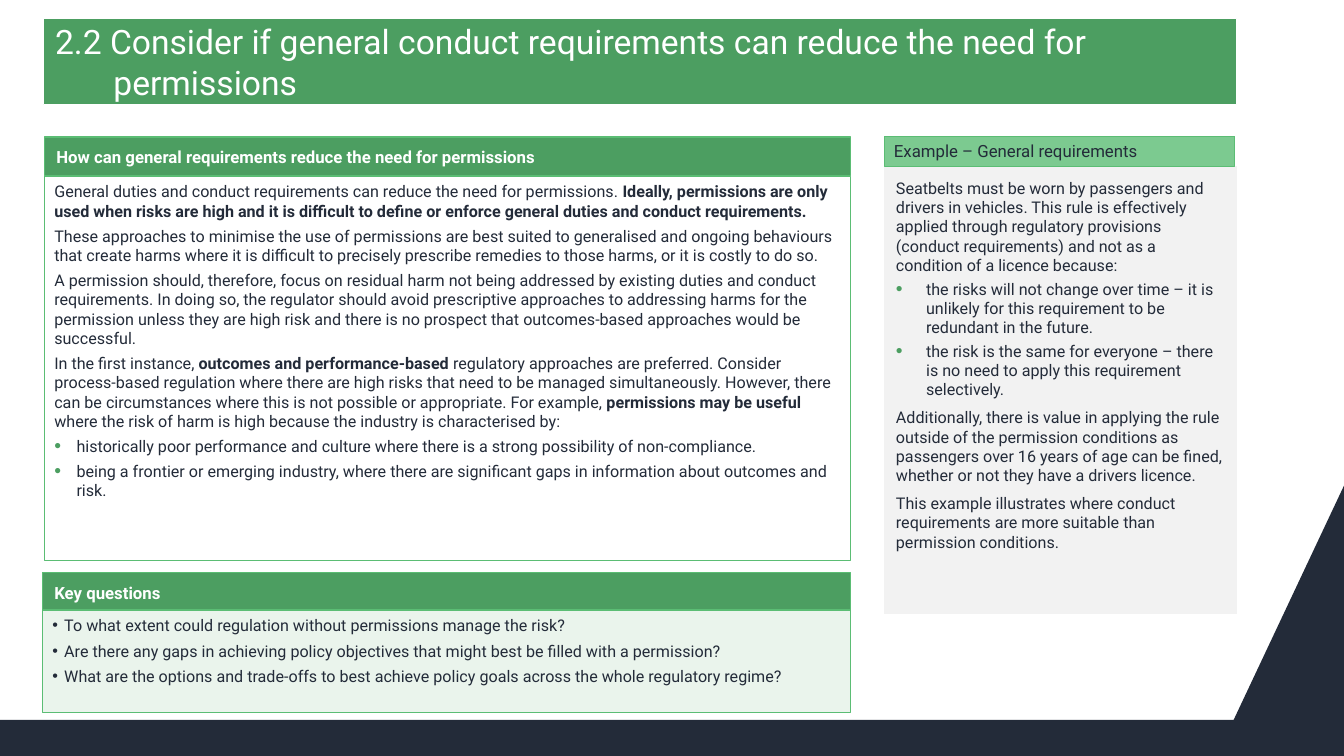
from lxml import etree
from pptx import Presentation, util as u
from pptx.dml import color
from pptx.enum import shapes, text
from pptx.oxml import ns

theme = {
    "font": "Roboto",
    "navy": "232B39", "green": "4C9E61", "light_green": "7CCA90", "border": "5BBD74",
    "pale_green": "EAF4EC", "grey": "F2F2F2", "white": "FFFFFF",
    "title": 24, "heading": 12, "body": 11.5,
}


def rgb(name):
    return color.RGBColor.from_string(theme[name])


def add_panel(box, paragraphs, fill, border=None, border_width=1, size="body", ink="navy",
              bold=False, middle=False, insets=(0.25, 0.13)):
    """Rectangle with text; **marks** enclose bold words, each paragraph has a style."""
    panel = slide.shapes.add_shape(shapes.MSO_SHAPE.RECTANGLE, *map(u.Cm, box))
    panel.shadow.inherit = False
    panel.fill.solid()
    panel.fill.fore_color.rgb = rgb(fill)
    if border:
        panel.line.color.rgb = rgb(border)
        panel.line.width = u.Pt(border_width)
    else:
        panel.line.fill.background()
    side, *vertical = insets
    frame_format = {
        "word_wrap": True,
        "vertical_anchor": text.MSO_ANCHOR.MIDDLE if middle else text.MSO_ANCHOR.TOP,
        "margin_left": u.Cm(side), "margin_right": u.Cm(side),
        "margin_top": u.Cm(vertical[0]), "margin_bottom": u.Cm(vertical[-1]),
    }
    for name, value in frame_format.items():
        setattr(panel.text_frame, name, value)

    for index, (words, style) in enumerate(paragraphs):
        frame = panel.text_frame
        paragraph = frame.add_paragraph() if index else frame.paragraphs[0]
        paragraph_format = {
            "alignment": text.PP_ALIGN.LEFT,
            "space_before": u.Pt(style.get("before", 0)),
            "space_after": u.Pt(style.get("after", 0)),
            "line_spacing": style.get("spacing", 1.0),
        }
        for name, value in paragraph_format.items():
            setattr(paragraph, name, value)
        for part, piece in enumerate(words.split("**")):
            if not piece:
                continue
            run = paragraph.add_run()
            run.text = piece
            run.font.color.rgb = rgb(ink)
            run_format = {"name": theme["font"], "size": u.Pt(theme[size]),
                          "bold": bold or part % 2 == 1}
            for name, value in run_format.items():
                setattr(run.font, name, value)

        # Hanging indent and bullet
        properties = paragraph._p.get_or_add_pPr()
        if "hang" in style:
            properties.set("marL", str(u.Cm(style["hang"])))
            properties.set("indent", str(-u.Cm(style["hang"])))
        if "bullet" in style:
            if style["bullet"] == "green":
                tint = etree.SubElement(properties, ns.qn("a:buClr"))
                etree.SubElement(tint, ns.qn("a:srgbClr"), val=theme["green"])
                etree.SubElement(properties, ns.qn("a:buSzPct"), val="120000")
            etree.SubElement(properties, ns.qn("a:buFont"), typeface="Arial")
            etree.SubElement(properties, ns.qn("a:buChar"), char="•")


deck = Presentation()
deck.slide_width, deck.slide_height = u.Cm(33.87), u.Cm(19.05)
slide = deck.slides.add_slide(deck.slide_layouts[6])

# Footer band rising to the right
footer_points = [(0, 18.14), (0, 19.05), (33.87, 19.05), (33.87, 12.24)]
outline = slide.shapes.build_freeform(u.Cm(31.09), u.Cm(18.14))
outline.add_line_segments([(u.Cm(x), u.Cm(y)) for x, y in footer_points], close=True)
footer = outline.convert_to_shape()
footer.shadow.inherit = False
footer.fill.solid()
footer.fill.fore_color.rgb = rgb("navy")
footer.line.fill.background()

# Paragraph styles
plain = {}
example_text = {"before": 6}
example_bullet = {"before": 3, "hang": 0.76, "bullet": "green"}
main_text = {"before": 2, "after": 2}
main_bullet = {**main_text, "hang": 0.56, "bullet": "green"}
question = {**main_text, "hang": 0.3, "bullet": "plain"}
heading_line = {"spacing": 0.9}

# Example text
add_panel((22.28, 4.19, 8.89, 11.28), [
    ("Seatbelts must be worn by passengers and drivers in vehicles. This rule is effectively "
     "applied through regulatory provisions (conduct requirements) and not as a condition of "
     "a licence because:", example_text),
    ("the risks will not change over time – it is unlikely for this requirement to be "
     "redundant in the future.", example_bullet),
    ("the risk is the same for everyone – there is no need to apply this requirement "
     "selectively.", example_bullet),
    ("Additionally, there is value in applying the rule outside of the permission conditions "
     "as passengers over 16 years of age can be fined, whether or not they have a drivers "
     "licence.", example_text),
    ("This example illustrates where conduct requirements are more suitable than permission "
     "conditions.", example_text),
], "grey", insets=(0.3, 0.3))

# Green section headings
for box, heading in [
    ((1.12, 3.45, 20.32, 0.97), "How can general requirements reduce the need for permissions"),
    ((1.07, 14.43, 20.37, 0.97), "Key questions"),
]:
    add_panel(box, [(heading, heading_line)], "green", "border", size="heading",
              ink="white", bold=True, middle=True, insets=(0.3, 0.2, 0.1))

# General requirements
add_panel((1.12, 4.45, 20.32, 9.68), [
    ("General duties and conduct requirements can reduce the need for permissions. **Ideally, "
     "permissions are only used when risks are high and it is difficult to define or enforce "
     "general duties and conduct requirements.**", main_text),
    ("These approaches to minimise the use of permissions are best suited to generalised and "
     "ongoing behaviours that create harms where it is difficult to precisely prescribe "
     "remedies to those harms, or it is costly to do so.", main_text),
    ("A permission should, therefore, focus on residual harm not being addressed by existing "
     "duties and conduct requirements. In doing so, the regulator should avoid prescriptive "
     "approaches to addressing harms for the permission unless they are high risk and there "
     "is no prospect that outcomes-based approaches would be successful.", main_text),
    ("In the first instance, **outcomes and performance-based **regulatory approaches are "
     "preferred. Consider process-based regulation where there are high risks that need to "
     "be managed simultaneously. However, there can be circumstances where this is not "
     "possible or appropriate. For example, **permissions may be useful **where the risk of "
     "harm is high because the industry is characterised by:", main_text),
    ("historically poor performance and culture where there is a strong possibility of "
     "non-compliance.", main_bullet),
    ("being a frontier or emerging industry, where there are significant gaps in information "
     "about outcomes and risk.", main_bullet),
], "white", "border")

# Key questions
add_panel((1.07, 15.37, 20.37, 2.59), [
    ("To what extent could regulation without permissions manage the risk?", question),
    ("Are there any gaps in achieving policy objectives that might best be filled with a "
     "permission?", {**question, "spacing": 1.07}),
    ("What are the options and trade-offs to best achieve policy goals across the whole "
     "regulatory regime?", question),
], "pale_green", "border")

# Slide title
add_panel((1.09, 0.46, 30.07, 2.18), [
    ("2.2 Consider if general conduct requirements can reduce the need for permissions",
     {"hang": 1.47}),
], "green", "white", size="title", ink="white", middle=True, insets=(0.3, 0.03))

# Example heading
add_panel((22.28, 3.43, 8.84, 0.76), [("Example – General requirements", plain)],
          "light_green", "border", 0.75, size="heading", middle=True)

deck.save("out.pptx")
